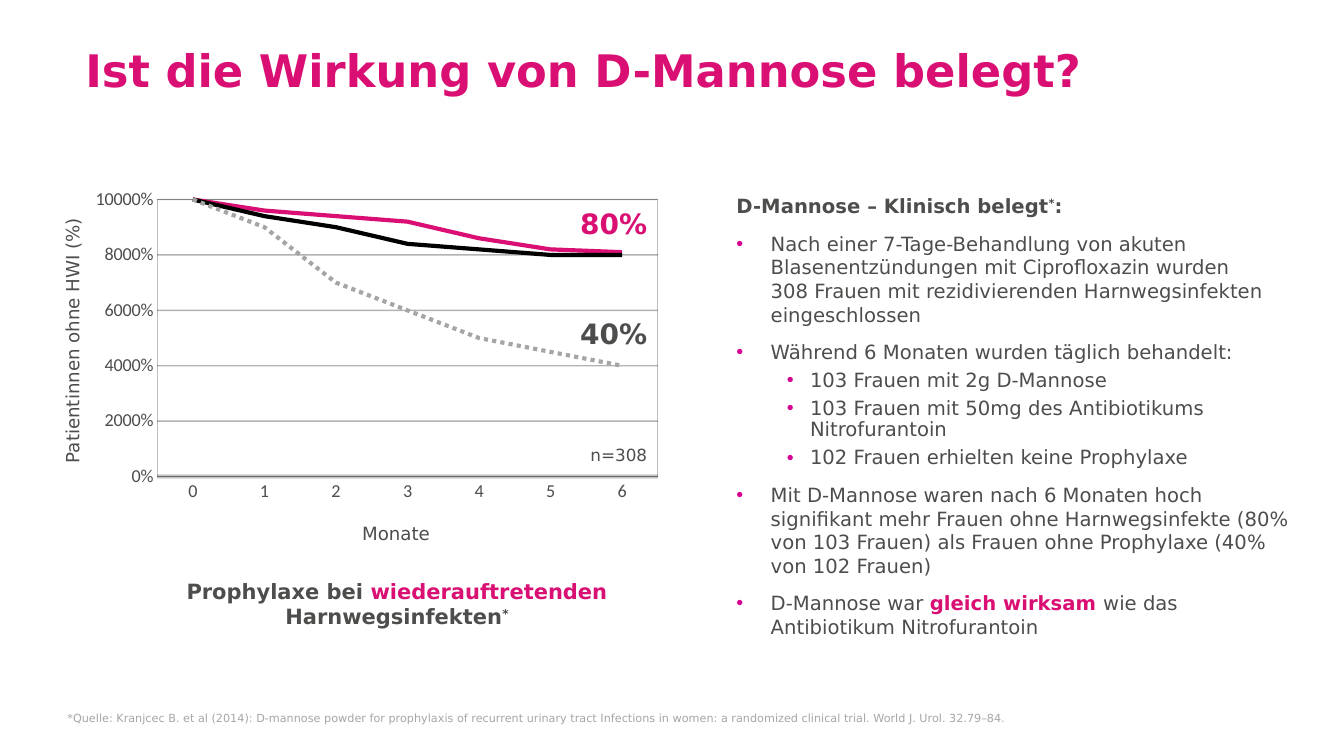
from lxml import etree
from pptx import Presentation
from pptx.chart.data import CategoryChartData as Data
from pptx.dml.color import RGBColor as RGB
from pptx.enum.chart import XL_CHART_TYPE as Kind, XL_MARKER_STYLE as Mark, XL_TICK_MARK as Tick
from pptx.enum.dml import MSO_LINE as Dash
from pptx.enum.text import PP_ALIGN as Align
from pptx.oxml import parse_xml
from pptx.oxml.ns import nsdecls, qn
from pptx.util import Cm, Pt

PINK, GRAY, BLACK = "DA0F73", "4D4D4C", "000000"
FONT = "DejaVu Sans"


def color(text):
    return RGB.from_string(text)


def write(para, text, size=14, ink=GRAY, bold=False, lift=False):
    for i, line in enumerate(text.split("\n")):
        if i:
            para.add_line_break()
        run = para.add_run()
        run.text = line
        font = run.font
        font.name, font.size, font.bold = FONT, Pt(size), bold
        font.color.rgb = color(ink)
        if lift:
            font._element.set("baseline", "30000")


def frame(slide, left, top, wide, high):
    shape = slide.shapes.add_textbox(Cm(left), Cm(top), Cm(wide), Cm(high))
    shape.text_frame.word_wrap = True
    return shape


def label(slide, box, text, align=Align.LEFT, **style):
    shape = frame(slide, *box)
    para = shape.text_frame.paragraphs[0]
    para.alignment = align
    write(para, text, **style)
    return shape


def fade(line, ink, width, alpha):
    line.width = Pt(width)
    line.color.rgb = color(ink)
    tone = line._ln.find(".//" + qn("a:srgbClr"))
    etree.SubElement(tone, qn("a:alpha")).set("val", str(alpha * 1000))


def layout(chart, **parts):
    tags = "".join(f'<c:{key} val="{val}"/>' for key, val in parts.items())
    xml = (f'<c:layout {nsdecls("c")}><c:manualLayout><c:layoutTarget val="inner"/>'
           f'<c:xMode val="edge"/><c:yMode val="edge"/>{tags}</c:manualLayout></c:layout>')
    plot = chart._chartSpace.chart.plotArea
    old = plot.find(qn("c:layout"))
    if old is not None:
        plot.remove(old)
    plot.insert(0, parse_xml(xml))


def border(chart):
    plot = chart._chartSpace.chart.plotArea
    plot.append(parse_xml(
        f'<c:spPr {nsdecls("c", "a")}><a:noFill/><a:ln w="9525"><a:solidFill>'
        '<a:srgbClr val="BFBFBF"/></a:solidFill></a:ln></c:spPr>'))


def curves(slide, left, top, wide, high):
    rows = [
        ("Series 1", (100, 96, 94, 92, 86, 82, 81), PINK, Dash.SOLID),
        ("Series 2", (100, 94, 90, 84, 82, 80, 80), BLACK, Dash.SOLID),
        ("Series 3", (100, 90, 70, 60, 50, 45, 40), "A5A5A5", Dash.ROUND_DOT),
    ]
    data = Data()
    data.categories = [str(month) for month in range(7)]
    for name, vals, _, _ in rows:
        data.add_series(name, vals)
    chart = slide.shapes.add_chart(
        Kind.LINE, Cm(left), Cm(top), Cm(wide), Cm(high), data).chart
    chart.has_legend = chart.has_title = False
    layout(chart, x=0.104, y=0.031, w=0.894, h=0.825)
    border(chart)
    for series, (_, _, ink, dash) in zip(chart.plots[0].series, rows):
        series.smooth = False
        series.marker.style = Mark.NONE
        line = series.format.line
        line.width, line.dash_style = Pt(3), dash
        line.color.rgb = color(ink)
    chart.plots[0].vary_by_categories = False
    months, rate = chart.category_axis, chart.value_axis
    for axis in (months, rate):
        axis.major_tick_mark = axis.minor_tick_mark = Tick.NONE
        font = axis.tick_labels.font
        font.name, font.size = "Calibri", Pt(13)
        font.color.rgb = color(GRAY)
    months.has_major_gridlines = False
    fade(months.format.line, BLACK, 3, 20)
    rate.minimum_scale, rate.maximum_scale, rate.major_unit = 0, 100, 20
    rate.tick_labels.number_format = "0%"
    rate.tick_labels.number_format_is_linked = False
    rate.format.line.fill.background()
    fade(rate.major_gridlines.format.line, BLACK, 1, 30)


def study(slide, left, top, wide, high):
    curves(slide, left, top, wide, high)
    notes = [("80%", 0.33, 20, PINK, True), ("40%", 3.1, 20, GRAY, True),
             ("n=308", 6.32, 12, GRAY, False)]
    for text, down, size, ink, bold in notes:
        label(slide, (left + 8.69, top + down, 5.46, 1), text, Align.RIGHT,
              size=size, ink=ink, bold=bold)
    label(slide, (left + 1.65, top + 8.28, 11.84, 0.81), "Monate", Align.CENTER, size=13)
    side = label(slide, (left - 4.37, top + 3.43, 7.57, 0.81),
                 "Patientinnen ohne HWI (%)", Align.CENTER, size=13)
    side.rotation = 270
    para = frame(slide, left + 1.78, top + 9.7, 11.63, 1.55).text_frame.paragraphs[0]
    para.alignment = Align.CENTER
    write(para, "Prophylaxe bei ", size=15, bold=True)
    write(para, "wiederauftretenden", size=15, ink=PINK, bold=True)
    write(para, " Harnwegsinfekten", size=15, bold=True)
    write(para, "*", size=15, bold=True, lift=True)


def bullet(para, level):
    props = para._p.get_or_add_pPr()
    start, hang = ((0.34, 0.34), (0.73, 0.23))[level]
    props.set("marL", str(Cm(start * 2.54)))
    props.set("indent", str(-Cm(hang * 2.54)))
    para.level = level
    para.space_before = Pt((10, 5)[level])
    if level:
        para.line_spacing = 0.9
    tint = etree.SubElement(props, qn("a:buClr"))
    etree.SubElement(tint, qn("a:srgbClr")).set("val", "D60093")
    etree.SubElement(props, qn("a:buFont")).set("typeface", "Arial")
    etree.SubElement(props, qn("a:buChar")).set("char", "•")


def proof(slide, *box):
    body = frame(slide, *box).text_frame
    head = body.paragraphs[0]
    head.line_spacing = 0.9
    write(head, "D-Mannose – Klinisch belegt", bold=True)
    write(head, "*", bold=True, lift=True)
    write(head, ":", bold=True)
    points = [
        (0, "Nach einer 7-Tage-Behandlung von akuten Blasenentzündungen mit Ciprofloxazin wurden \n"
            "308 Frauen mit rezidivierenden Harnwegsinfekten eingeschlossen"),
        (0, "Während 6 Monaten wurden täglich behandelt:"),
        (1, "103 Frauen mit 2g D-Mannose"),
        (1, "103 Frauen mit 50mg des Antibiotikums Nitrofurantoin"),
        (1, "102 Frauen erhielten keine Prophylaxe"),
        (0, "Mit D-Mannose waren nach 6 Monaten hoch signifikant mehr Frauen ohne "
            "Harnwegsinfekte (80% von 103 Frauen) als Frauen ohne Prophylaxe (40% von 102 Frauen)"),
        (0, "D-Mannose war "),
    ]
    for level, text in points:
        para = body.add_paragraph()
        bullet(para, level)
        write(para, text)
    write(para, "gleich wirksam ", ink=PINK, bold=True)
    write(para, "wie das Antibiotikum Nitrofurantoin")


def source(slide, *box):
    body = label(slide, box, "*Quelle: Kranjcec B. et al (2014): D-mannose powder for prophylaxis "
                 "of recurrent urinary tract Infections in women: a randomized clinical trial. "
                 "World J. Urol. 32.79–84.", size=8, ink="A6A6A6").text_frame
    body.margin_left = body.margin_right = body.margin_top = body.margin_bottom = 0


def main():
    deck = Presentation()
    deck.slide_width, deck.slide_height = Cm(33.87), Cm(19.05)
    slide = deck.slides.add_slide(deck.slide_layouts[6])
    label(slide, (1.9, 0.94, 29.92, 1.63), "Ist die Wirkung von D-Mannose belegt?",
          size=32, ink=PINK, bold=True)
    study(slide, 2.41, 4.75, 14.22, 8.48)
    proof(slide, 18.31, 4.83, 14.68, 12.01)
    source(slide, 1.7, 17.93, 28.45, 1.02)
    deck.save("out.pptx")


if __name__ == "__main__":
    main()
